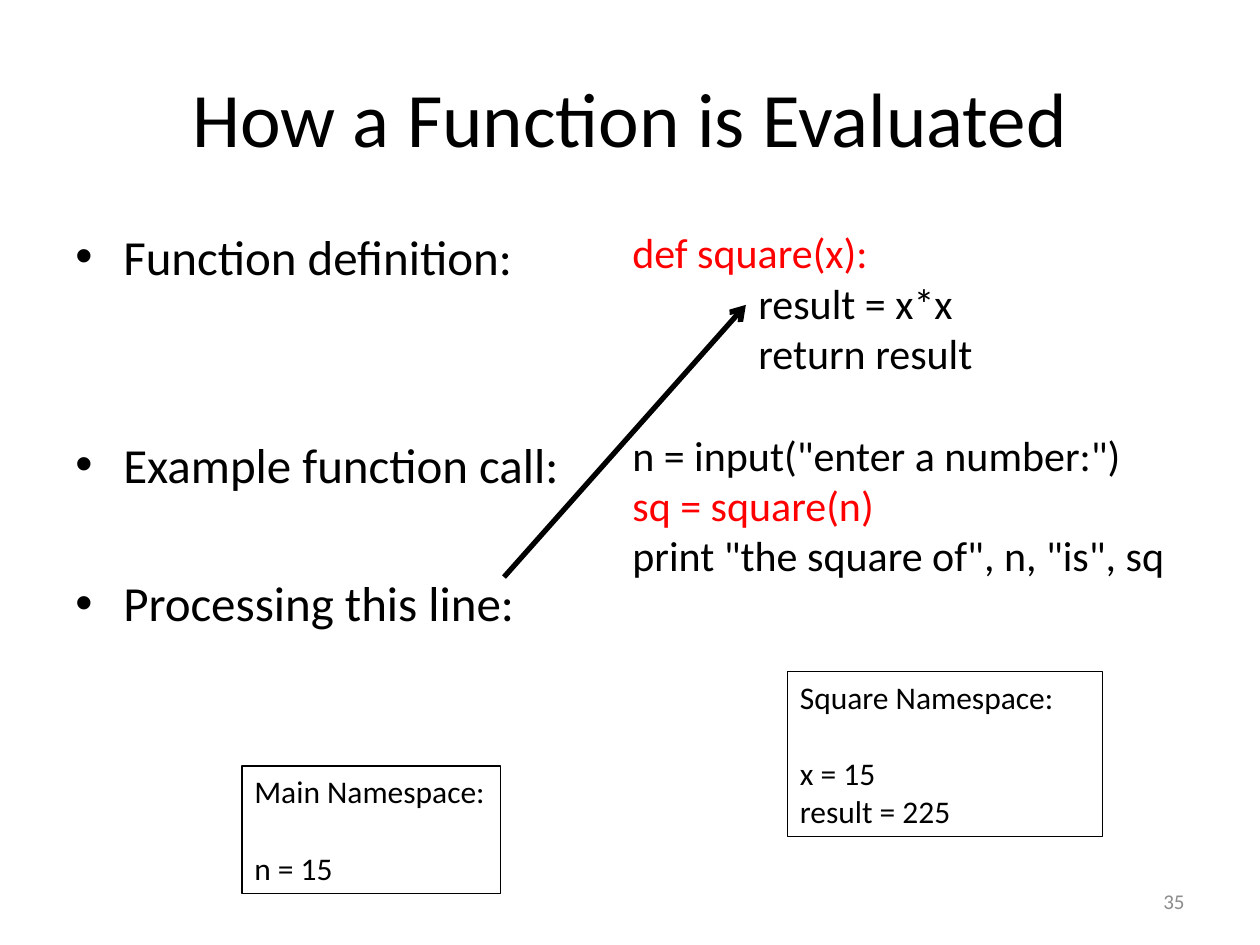
"""Build the slide that shows how a function call is evaluated."""
from dataclasses import dataclass

import lxml.etree
import pptx
import pptx.dml.color
import pptx.enum.shapes
import pptx.enum.text
import pptx.oxml.ns
import pptx.shapes.autoshape
import pptx.slide
import pptx.util

Inches = pptx.util.Inches
Pt = pptx.util.Pt
Align = pptx.enum.text.PP_ALIGN
Anchor = pptx.enum.text.MSO_ANCHOR

BLACK = pptx.dml.color.RGBColor(0x00, 0x00, 0x00)
RED = pptx.dml.color.RGBColor(0xFF, 0x00, 0x00)
GRAY = pptx.dml.color.RGBColor(0x8C, 0x8C, 0x8C)
FONT = "Calibri"
LINE_HEIGHT = 1.22


@dataclass(frozen=True)
class Line:
    """One paragraph, with its gap above in points and indent in inches."""
    text: str
    color: pptx.dml.color.RGBColor = BLACK
    gap: float = 0
    indent: float = 0
    bullet: bool = False


@dataclass(frozen=True)
class Box:
    """Left, top, width and height in inches."""
    left: float
    top: float
    width: float
    height: float

    def lengths(self) -> tuple:
        return tuple(map(Inches, (self.left, self.top, self.width, self.height)))


@dataclass(frozen=True)
class Namespace:
    """A framed list of the variables in one scope."""
    box: Box
    title: str
    variables: tuple[str, ...]


BULLET_SIZE, CODE_SIZE, NAMESPACE_SIZE = 28, 24, 18
BULLET_GAP = 0.2 * BULLET_SIZE
BULLET_STEP = LINE_HEIGHT * BULLET_SIZE + BULLET_GAP

TOPICS = [
    Line(text, gap=BULLET_GAP + skipped * BULLET_STEP, indent=0.38, bullet=True)
    for text, skipped in (
        ("Function definition:", 0),
        ("Example function call:", 2),
        ("Processing this line:", 1),
    )
]
CODE = [
    Line("def square(x):", RED),
    Line("result = x*x", indent=1),
    Line("return result", indent=1),
    Line('n = input("enter a number:")', gap=LINE_HEIGHT * CODE_SIZE),
    Line("sq = square(n)", RED),
    Line('print "the square of", n, "is", sq'),
]
NAMESPACES = [
    Namespace(Box(1.92, 6.08, 2.05, 1.01), "Main Namespace:", ("n = 15",)),
    Namespace(Box(6.25, 5.33, 2.5, 1.31), "Square Namespace:", ("x = 15", "result = 225")),
]


def write_text(
    shape: pptx.shapes.autoshape.Shape,
    lines: list[Line],
    *,
    size: float,
    align: Align = Align.LEFT,
    anchor: Anchor = Anchor.TOP,
) -> None:
    """Fill a shape with formatted paragraphs."""
    frame = shape.text_frame
    frame.word_wrap = True
    frame.vertical_anchor = anchor
    for index, line in enumerate(lines):
        paragraph = frame.add_paragraph() if index else frame.paragraphs[0]
        paragraph.alignment = align
        paragraph.space_before = Pt(round(line.gap, 1))
        properties = paragraph._p.get_or_add_pPr()
        if line.indent:
            properties.set("marL", str(Inches(line.indent)))
        if line.bullet:
            properties.set("indent", str(-Inches(line.indent)))
            font = lxml.etree.SubElement(properties, pptx.oxml.ns.qn("a:buFont"))
            font.set("typeface", "Arial")
            mark = lxml.etree.SubElement(properties, pptx.oxml.ns.qn("a:buChar"))
            mark.set("char", "•")
        run = paragraph.add_run()
        run.text = line.text
        run.font.name = FONT
        run.font.size = Pt(size)
        run.font.color.rgb = line.color


def add_text(slide: pptx.slide.Slide, box: Box, lines: list[Line], **text_format) -> None:
    """Add a text box."""
    write_text(slide.shapes.add_textbox(*box.lengths()), lines, **text_format)


def add_namespace(slide: pptx.slide.Slide, namespace: Namespace) -> None:
    """Add a framed namespace, with a line's gap below its title."""
    frame = slide.shapes.add_shape(
        pptx.enum.shapes.MSO_SHAPE.RECTANGLE, *namespace.box.lengths()
    )
    frame.shadow.inherit = False
    frame.fill.background()
    frame.line.color.rgb = BLACK
    frame.line.width = Pt(0.75)
    first, *rest = namespace.variables
    lines = [Line(namespace.title), Line(first, gap=LINE_HEIGHT * NAMESPACE_SIZE)]
    write_text(frame, lines + [Line(text) for text in rest], size=NAMESPACE_SIZE)
    frame.text_frame.auto_size = pptx.enum.text.MSO_AUTO_SIZE.SHAPE_TO_FIT_TEXT


def add_arrow(
    slide: pptx.slide.Slide, start: tuple[float, float], end: tuple[float, float]
) -> None:
    """Add a straight arrow between two points in inches."""
    arrow = slide.shapes.add_connector(
        pptx.enum.shapes.MSO_CONNECTOR.STRAIGHT, *map(Inches, start + end)
    )
    arrow.line.color.rgb = BLACK
    arrow.line.width = Pt(3)
    head = lxml.etree.SubElement(arrow.line._get_or_add_ln(), pptx.oxml.ns.qn("a:tailEnd"))
    head.set("type", "arrow")
    lxml.etree.SubElement(arrow._element.spPr, pptx.oxml.ns.qn("a:effectLst"))


def main() -> None:
    """Draw and save the slide."""
    presentation = pptx.Presentation()
    presentation.slide_width = Inches(10)
    presentation.slide_height = Inches(7.5)
    slide = presentation.slides.add_slide(presentation.slide_layouts[6])

    add_text(slide, Box(0.5, 0.3, 9, 1.25), [Line("How a Function is Evaluated")],
             size=44, align=Align.CENTER, anchor=Anchor.MIDDLE)
    add_text(slide, Box(0.5, 1.75, 6.42, 3.67), TOPICS, size=BULLET_SIZE)
    add_text(slide, Box(7.17, 6.95, 2.33, 0.4), [Line("35", GRAY)],
             size=12, align=Align.RIGHT, anchor=Anchor.MIDDLE)
    add_text(slide, Box(4.92, 1.75, 4.92, 3.17), CODE, size=CODE_SIZE)
    add_arrow(slide, (4, 4.58), (5.92, 2.42))
    for namespace in NAMESPACES:
        add_namespace(slide, namespace)

    presentation.save("out.pptx")


if __name__ == "__main__":
    main()
